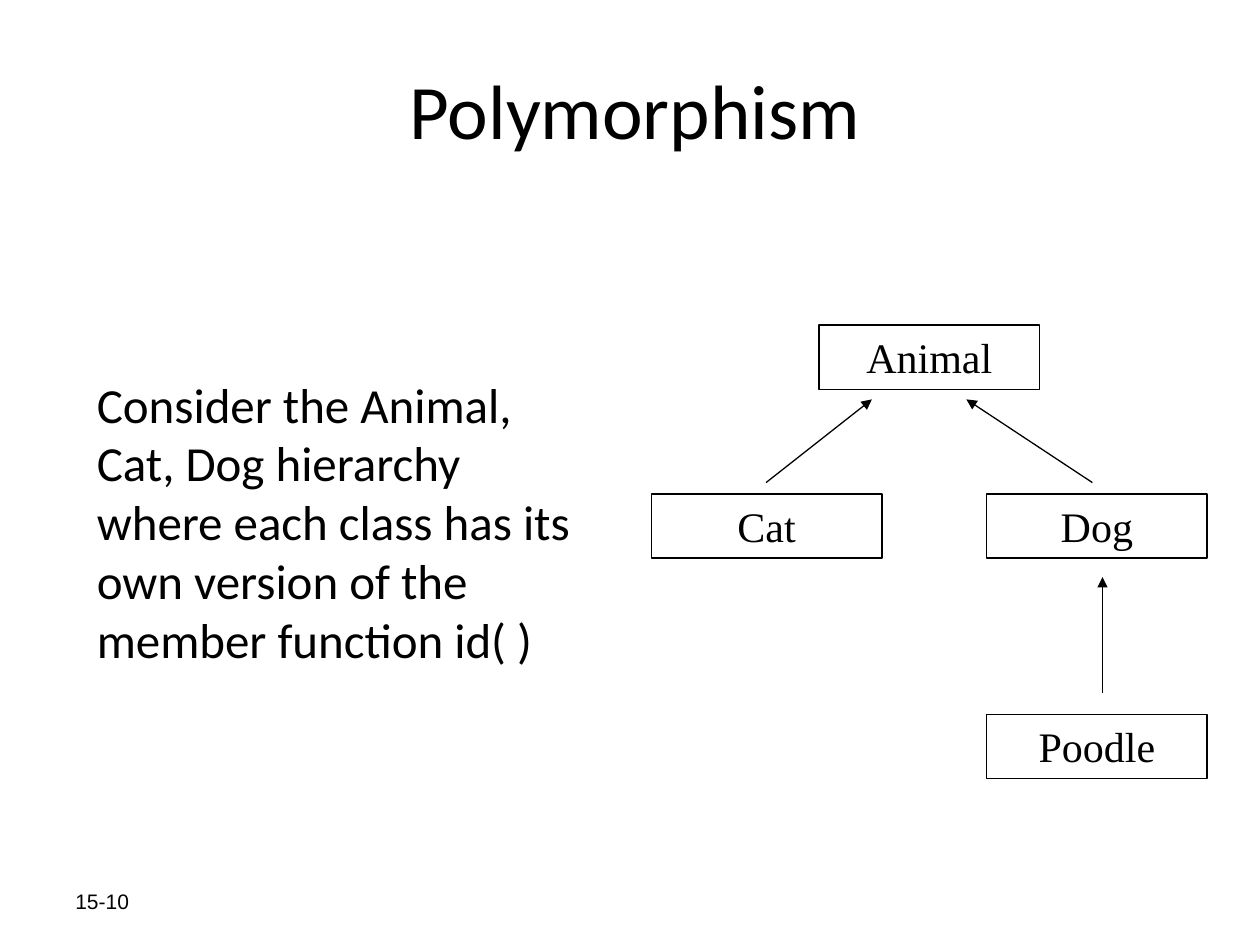
"""Build a slide showing a class hierarchy for polymorphism."""
from dataclasses import dataclass

from lxml import etree
from pptx import Presentation
from pptx import util as u
from pptx.dml.color import RGBColor
from pptx.enum import shapes, text
from pptx.oxml.ns import qn

COLOURS = {"ink": "000000", "paper": "FFFFFF"}
LINE_WIDTH = u.Pt(0.75)
BOX_HEIGHT = 0.51


@dataclass(frozen=True)
class ClassBox:
    name: str
    left: float
    top: float
    width: float = 1.75


@dataclass(frozen=True)
class Arrow:
    start: tuple[float, float]
    end: tuple[float, float]


CLASS_BOXES = [
    ClassBox("Animal", 6.5, 2.58),
    ClassBox("Cat", 5.17, 3.92, 1.83),
    ClassBox("Dog", 7.83, 3.92),
    ClassBox("Poodle", 7.83, 5.67),
]
ARROWS = [
    Arrow((6.08, 3.83), (6.92, 3.17)),
    Arrow((8.67, 3.83), (7.67, 3.17)),
    Arrow((8.75, 5.5), (8.75, 4.58)),
]


def colour(name: str) -> RGBColor:
    return RGBColor.from_string(COLOURS[name])


def write(shape, words: str, *, font: str, size: float,
          align=text.PP_ALIGN.LEFT, anchor=text.MSO_ANCHOR.TOP) -> None:
    frame = shape.text_frame
    frame.word_wrap = True
    frame.vertical_anchor = anchor
    para = frame.paragraphs[0]
    para.alignment = align
    span = para.add_run()
    span.text = words
    span.font.name = font
    span.font.size = u.Pt(size)
    span.font.color.rgb = colour("ink")


def add_text(page, words: str, left: float, top: float, width: float,
             height: float, **style) -> None:
    box = page.shapes.add_textbox(*map(u.Inches, (left, top, width, height)))
    write(box, words, **style)


def add_class_box(page, item: ClassBox) -> None:
    box = page.shapes.add_shape(
        shapes.MSO_SHAPE.RECTANGLE,
        *map(u.Inches, (item.left, item.top, item.width, BOX_HEIGHT)))
    box.shadow.inherit = False
    box.fill.background()
    box.line.color.rgb = colour("ink")
    box.line.width = LINE_WIDTH
    write(box, item.name, font="Times New Roman", size=24,
          align=text.PP_ALIGN.CENTER)


def add_arrow(page, arrow: Arrow) -> None:
    line = page.shapes.add_connector(
        shapes.MSO_CONNECTOR.STRAIGHT,
        *map(u.Inches, arrow.start + arrow.end))
    line.line.color.rgb = colour("ink")
    line.line.width = LINE_WIDTH
    outline = line.line._get_or_add_ln()
    etree.SubElement(outline, qn("a:tailEnd"), type="triangle")
    etree.SubElement(line._element.spPr, qn("a:effectLst"))


def main() -> None:
    deck = Presentation()
    deck.slide_width, deck.slide_height = u.Inches(10), u.Inches(7.5)
    page = deck.slides.add_slide(deck.slide_layouts[6])
    page.background.fill.solid()
    page.background.fill.fore_color.rgb = colour("paper")

    add_text(page, "Polymorphism", 0.58, 0.32, 8.92, 1.09,
             font="Calibri", size=44, align=text.PP_ALIGN.CENTER,
             anchor=text.MSO_ANCHOR.MIDDLE)
    add_text(page, "Consider the Animal, Cat, Dog hierarchy where each class "
             "has its own version of the member function id( )",
             0.67, 2.92, 4.15, 3.42, font="Calibri", size=28)
    add_text(page, "15-10", 0.5, 6.95, 2.33, 0.4, font="Arial", size=12,
             anchor=text.MSO_ANCHOR.MIDDLE)
    for item in CLASS_BOXES:
        add_class_box(page, item)
    for arrow in ARROWS:
        add_arrow(page, arrow)

    deck.save("out.pptx")


if __name__ == "__main__":
    main()
